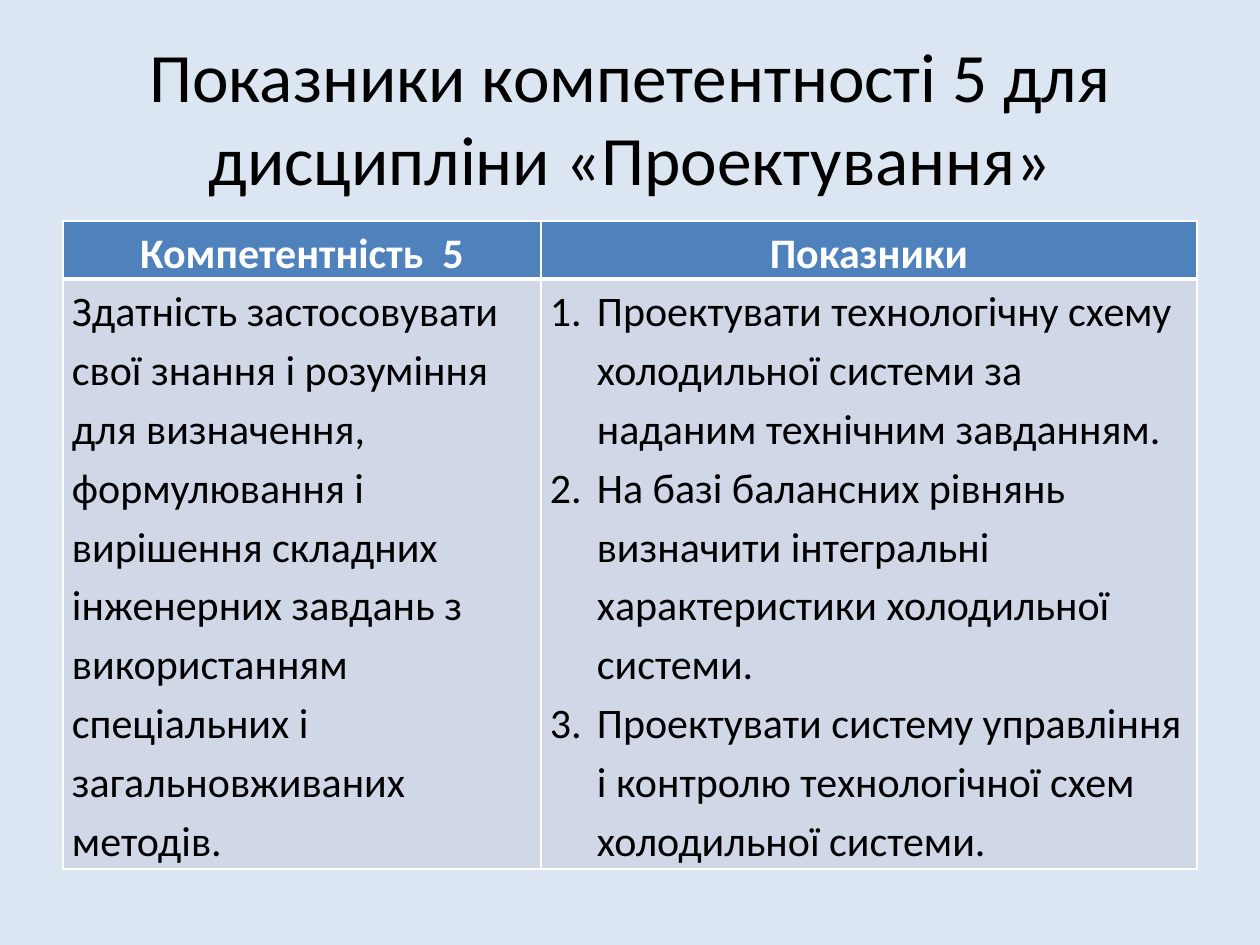
from lxml import etree
from pptx import Presentation
from pptx.dml.color import RGBColor
from pptx.enum.text import MSO_ANCHOR, PP_ALIGN
from pptx.oxml.ns import qn
from pptx.util import Pt

CENTER, LEFT = PP_ALIGN.CENTER, PP_ALIGN.LEFT
MIDDLE, TOP = MSO_ANCHOR.MIDDLE, MSO_ANCHOR.TOP

# Content
TITLE = "Показники компетентності 5 для дисципліни «Проектування»"
HEADER = ["Компетентність  5", "Показники"]
COMPETENCE = (
    "Здатність застосовувати свої знання і розуміння для визначення, "
    "формулювання і вирішення складних інженерних завдань з використанням "
    "спеціальних і загальновживаних методів."
)
INDICATORS = [
    "Проектувати технологічну схему холодильної системи за наданим технічним завданням.",
    "На базі балансних рівнянь визначити інтегральні характеристики холодильної системи.",
    "Проектувати систему управління і контролю технологічної схем холодильної системи.",
]

# Look
COLORS = {"bg": "DCE6F2", "header": "4F81BD", "body": "D0D8E8",
          "white": "FFFFFF", "black": "000000"}
TITLE_FONT = {"name": "Calibri", "size": Pt(39.6), "bold": False}
HEADER_FONT = {"name": "Calibri", "size": Pt(24), "bold": True}
BODY_FONT = {**HEADER_FONT, "bold": False}

# Layout in px, 126 to the inch; the body row holds ten lines of text
SLIDE_W, SLIDE_H = 1260, 945
MARGIN, CELL_PAD, INDENT = 63, 9, 47
TITLE_TOP, TITLE_H = 38, 157
TABLE_TOP = 221
COLS, ROWS = [478, 656], [57, 590]


def px(n):
    return round(n * 914400 / 126)


def rgb(name):
    return RGBColor.from_string(COLORS[name])


def write(p, text, font, color, align, spacing=None):
    p.alignment = align
    p.line_spacing = spacing
    r = p.add_run()
    r.text = text
    for key, value in font.items():
        setattr(r.font, key, value)
    r.font.color.rgb = rgb(color)


def number(p):
    pPr = p._p.get_or_add_pPr()
    pPr.set("marL", str(px(INDENT)))
    pPr.set("indent", str(-px(INDENT)))
    etree.SubElement(pPr, qn("a:buFont"), typeface="+mj-lt")
    etree.SubElement(pPr, qn("a:buAutoNum"), type="arabicPeriod")


def set_borders(cell, widths):
    tcPr = cell._tc.get_or_add_tcPr()
    for i, (side, width) in enumerate(widths.items()):
        ln = etree.Element(qn(f"a:ln{side}"), w=str(Pt(width)))
        fill = etree.SubElement(ln, qn("a:solidFill"))
        etree.SubElement(fill, qn("a:srgbClr"), val=COLORS["white"])
        tcPr.insert(i, ln)


prs = Presentation()
prs.slide_width, prs.slide_height = px(SLIDE_W), px(SLIDE_H)
s = prs.slides.add_slide(prs.slide_layouts[6])
s.background.fill.solid()
s.background.fill.fore_color.rgb = rgb("bg")

# Title
width = SLIDE_W - 2 * MARGIN
tf = s.shapes.add_textbox(px(MARGIN), px(TITLE_TOP), px(width), px(TITLE_H)).text_frame
tf.word_wrap = True
tf.vertical_anchor = MIDDLE
write(tf.paragraphs[0], TITLE, TITLE_FONT, "black", CENTER)

# Table of the competence and its indicators
table = s.shapes.add_table(len(ROWS), len(COLS), px(MARGIN), px(TABLE_TOP),
                           px(sum(COLS)), px(sum(ROWS))).table
for column, w in zip(table.columns, COLS):
    column.width = px(w)
for row, h in zip(table.rows, ROWS):
    row.height = px(h)

rows = [
    ([[text] for text in HEADER], HEADER_FONT, "white", "header", CENTER,
     {"L": 1, "R": 1, "T": 1, "B": 3}),
    ([[COMPETENCE], INDICATORS], BODY_FONT, "black", "body", LEFT,
     {"L": 1, "R": 1, "T": 3, "B": 1}),
]
for i, (cells, font, color, fill, align, borders) in enumerate(rows):
    for j, texts in enumerate(cells):
        cell = table.cell(i, j)
        cell.margin_left = cell.margin_right = px(CELL_PAD)
        cell.margin_top = cell.margin_bottom = 0
        cell.vertical_anchor = TOP
        cell.fill.solid()
        cell.fill.fore_color.rgb = rgb(fill)
        set_borders(cell, borders)
        tf = cell.text_frame
        for k, text in enumerate(texts):
            p = tf.add_paragraph() if k else tf.paragraphs[0]
            write(p, text, font, color, align, 1.15)
            if texts is INDICATORS:
                number(p)

prs.save("out.pptx")
